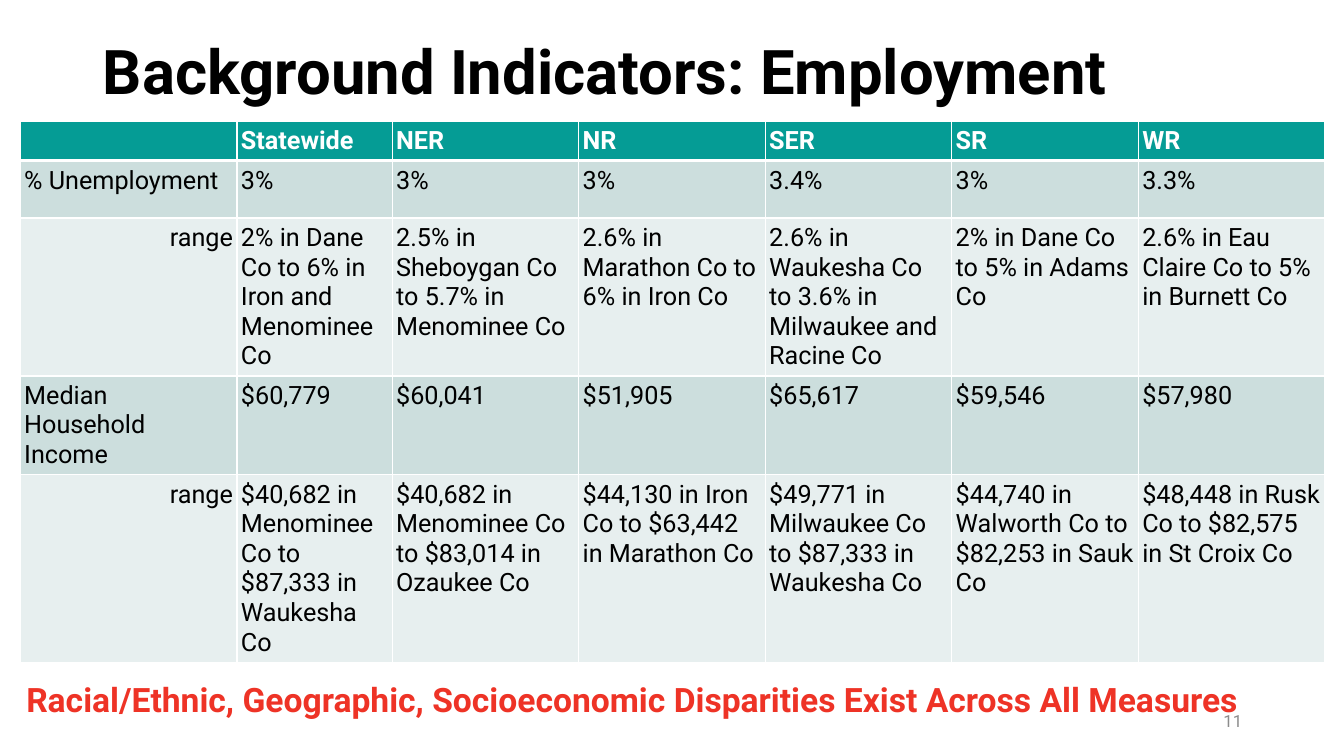
from lxml.etree import SubElement
from pptx import Presentation
from pptx.dml.color import RGBColor
from pptx.enum.text import MSO_ANCHOR as Anchor, MSO_AUTO_SIZE as Fit, PP_ALIGN as Align
from pptx.oxml.ns import qn
from pptx.util import Inches, Pt

BLACK = RGBColor(0x00, 0x00, 0x00)
WHITE = RGBColor(0xFF, 0xFF, 0xFF)
TEAL = RGBColor(0x05, 0x9C, 0x95)
MIST = RGBColor(0xCC, 0xDE, 0xDD)
PALE = RGBColor(0xE7, 0xEF, 0xEF)
RED = RGBColor(0xEE, 0x33, 0x26)
GREY = RGBColor(0x8C, 0x8C, 0x8C)

# Column widths and row heights, in percent of the slide
COLS = [16.13, 11.55] + [13.88] * 5
ROWS = [5.07, 7.6, 20.13, 12.53, 16.27]
DATA = [
    ["", "Statewide", "NER", "NR", "SER", "SR", "WR"],
    ["% Unemployment", "3%", "3%", "3%", "3.4%", "3%", "3.3%"],
    ["range",
     "2% in Dane Co to 6% in Iron and Menominee Co",
     "2.5% in Sheboygan Co to 5.7% in Menominee Co",
     "2.6% in Marathon Co to 6% in Iron Co",
     "2.6% in Waukesha Co to 3.6% in Milwaukee and Racine Co",
     "2% in Dane Co to 5% in Adams Co",
     "2.6% in Eau Claire Co to 5% in Burnett Co"],
    ["Median Household Income", "$60,779", "$60,041", "$51,905",
     "$65,617", "$59,546", "$57,980"],
    ["range",
     "$40,682 in Menominee Co to $87,333 in Waukesha Co",
     "$40,682 in Menominee Co to $83,014 in Ozaukee Co",
     "$44,130 in Iron Co to $63,442 in Marathon Co",
     "$49,771 in Milwaukee Co to $87,333 in Waukesha Co",
     "$44,740 in Walworth Co to $82,253 in Sauk Co",
     "$48,448 in Rusk Co to $82,575 in St Croix Co"],
]


class Page:
    """Holds the style and the slide; lengths are percent of its size."""
    face = "Roboto"

    def __init__(self, deck):
        self.wide, self.high = deck.slide_width, deck.slide_height
        self.slide = deck.slides.add_slide(deck.slide_layouts[5])

    def across(self, share):
        return round(self.wide * share / 100)

    def down(self, share):
        return round(self.high * share / 100)

    def box(self, x, y, w, h):
        return self.across(x), self.down(y), self.across(w), self.down(h)

    def put(self, frame, text, size, color, bold=False, align=Align.LEFT):
        frame.text = text
        para = frame.paragraphs[0]
        para.alignment = align
        font = para.font
        font.name, font.size, font.bold = self.face, Pt(size), bold
        font.color.rgb = color
        return para

    def title(self, text, *area):
        shape = self.slide.shapes.title
        shape.left, shape.top, shape.width, shape.height = self.box(*area)
        frame = shape.text_frame
        frame.auto_size = Fit.NONE
        frame.vertical_anchor = Anchor.MIDDLE
        self.put(frame, text, 44, BLACK, True).line_spacing = 0.9

    def label(self, text, area, size, color, bold, align, anchor, fit):
        frame = self.slide.shapes.add_textbox(*self.box(*area)).text_frame
        frame.word_wrap = True
        frame.auto_size = fit
        frame.vertical_anchor = anchor
        self.put(frame, text, size, color, bold, align)

    def edge(self, cell, top, base):
        props = cell._tc.get_or_add_tcPr()
        sides = [("lnL", 1), ("lnR", 1), ("lnT", top), ("lnB", base)]
        for spot, (side, width) in enumerate(sides):
            line = SubElement(props, qn("a:" + side), w=str(Pt(width)))
            fill = SubElement(line, qn("a:solidFill"))
            SubElement(fill, qn("a:srgbClr"), val=str(WHITE))
            props.insert(spot, line)

    def table(self, data, cols, rows, *area):
        shape = self.slide.shapes.add_table(len(rows), len(cols), *self.box(*area))
        grid = shape.table
        for col, share in zip(grid.columns, cols):
            col.width = self.across(share)
        for row, share in zip(grid.rows, rows):
            row.height = self.down(share)
        shape.height = self.down(area[3])
        for r, texts in enumerate(data):
            head = r == 0
            for c, text in enumerate(texts):
                cell = grid.cell(r, c)
                cell.margin_left = cell.margin_right = Inches(0.04)
                cell.margin_top = cell.margin_bottom = Inches(0.05)
                cell.fill.solid()
                cell.fill.fore_color.rgb = TEAL if head else MIST if r % 2 else PALE
                self.edge(cell, 3 if r == 1 else 1, 3 if head else 1)
                align = Align.RIGHT if text == "range" else Align.LEFT
                self.put(cell.text_frame, text, 18, WHITE if head else BLACK, head, align)


def main():
    deck = Presentation()
    deck.slide_width, deck.slide_height = Inches(13.33), Inches(7.5)
    page = Page(deck)

    # Title
    page.title("Background Indicators: Employment", 6.9, 0.13, 86.27, 19.33)

    # Indicators by region
    page.table(DATA, COLS, ROWS, 1.5, 16, 97, 72.93)

    # Key message and page number
    page.label("Racial/Ethnic, Geographic, Socioeconomic Disparities Exist Across All Measures",
               (0.98, 89.2, 92.12, 6.67), 24, RED, True, Align.CENTER, Anchor.TOP,
               Fit.SHAPE_TO_FIT_TEXT)
    page.label("11", (70.67, 92.67, 22.5, 5.33), 12, GREY, False, Align.RIGHT,
               Anchor.MIDDLE, Fit.NONE)

    deck.save("out.pptx")


if __name__ == "__main__":
    main()
